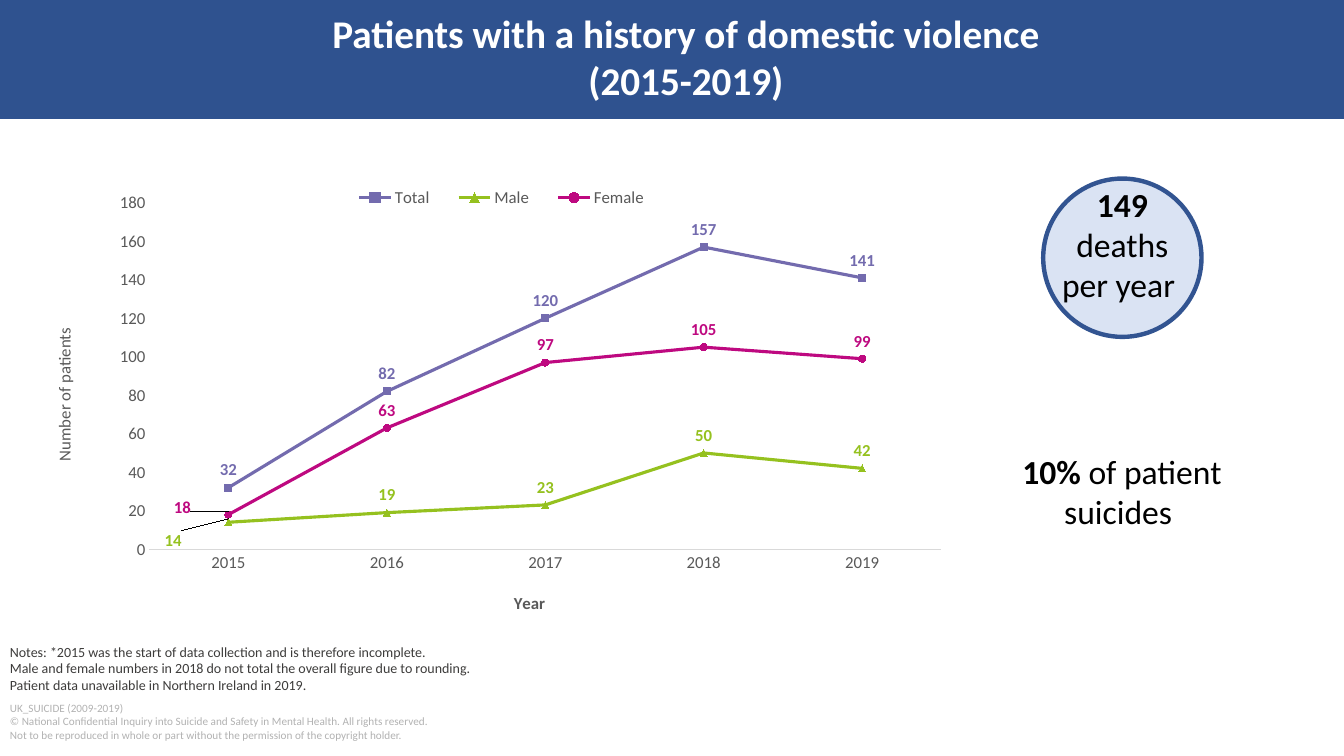
from lxml import etree
from pptx import Presentation
from pptx.chart.data import CategoryChartData
from pptx.dml.color import RGBColor
from pptx.enum import chart as ch, shapes, text
from pptx.oxml import parse_xml
from pptx.oxml.ns import nsdecls, qn
from pptx.util import Cm, Pt

BAND_BLUE = RGBColor(0x2F, 0x52, 0x8F)
RING_BLUE = RGBColor(0x32, 0x54, 0x91)
PALE_BLUE = RGBColor(0xDA, 0xE3, 0xF3)
WHITE = RGBColor(0xFF, 0xFF, 0xFF)
BLACK = RGBColor(0, 0, 0)
NOTE_GREY = RGBColor(0x3D, 0x3C, 0x3B)
CREDIT_GREY = RGBColor(0xB2, 0xB2, 0xB2)
AXIS_GREY = RGBColor(0x59, 0x59, 0x59)
LINE_GREY = RGBColor(0xD9, 0xD9, 0xD9)
PURPLE = RGBColor(0x73, 0x6B, 0xAE)
GREEN = RGBColor(0x95, 0xC1, 0x1F)
PINK = RGBColor(0xBE, 0x09, 0x80)


def set_font(font, size, color, bold=False):
    font.name, font.size, font.bold = "Calibri", Pt(size), bold
    font.color.rgb = color


def manual_layout(**values):
    """Return a c:layout; edges and target come before positions, as the schema asks."""
    layout = parse_xml(f"<c:layout {nsdecls('c')}><c:manualLayout/></c:layout>")
    for tag, value in values.items():
        etree.SubElement(layout[0], qn(f"c:{tag}")).set("val", str(value))
    return layout


prs = Presentation()
prs.slide_width, prs.slide_height = Cm(33.87), Cm(19.05)
slide = prs.slides.add_slide(prs.slide_layouts[5])

# Heading band, placed behind the title
band = slide.shapes.add_shape(shapes.MSO_SHAPE.RECTANGLE, 0, 0, prs.slide_width, Cm(3))
band.shadow.inherit = False
band.fill.solid()
band.fill.fore_color.rgb = BAND_BLUE
band.line.fill.background()
slide.shapes._spTree.insert(2, band._element)

title = slide.shapes.title
title.left, title.top, title.width, title.height = Cm(6.05), Cm(0.1), Cm(21.2), Cm(2.64)
title.text_frame.text = "Patients with a history of domestic violence (2015-2019)"
title.text_frame.word_wrap = True
title.text_frame.vertical_anchor = text.MSO_ANCHOR.MIDDLE
heading = title.text_frame.paragraphs[0]
heading.alignment = text.PP_ALIGN.CENTER
heading._p.get_or_add_pPr().set("marL", str(Cm(1.27)))
set_font(heading.runs[0].font, 28, WHITE, True)

# Deaths per year
badge = slide.shapes.add_group_shape()
ring = badge.shapes.add_shape(
    shapes.MSO_SHAPE.FLOWCHART_CONNECTOR, Cm(26.29), Cm(4.5), Cm(3.99), Cm(3.99))
ring.shadow.inherit = False
ring.fill.solid()
ring.fill.fore_color.rgb = PALE_BLUE
ring.line.color.rgb = RING_BLUE
ring.line.width = Pt(3.15)

# Text blocks: parent, left, top, width, height, size, colour, centred, paragraphs of (words, bold)
text_blocks = [
    (badge, 26.29, 4.5, 3.99, 3.33, 24, BLACK, True,
     [[("149", True)], [("deaths per year ", False)]]),
    (slide, 25.1, 11.23, 6.35, 2.31, 24, BLACK, True,
     [[("10% ", True), ("of patient suicides ", False)]]),
    (slide, 0, 16.08, 13.13, 1.55, 10, NOTE_GREY, False,
     [[("Notes: *2015 was the start of data collection and is therefore incomplete.", False)],
      [("Male and female numbers in 2018 do not total the overall figure due to rounding.", False)],
      [("Patient data unavailable in Northern Ireland in 2019.", False)]]),
    (slide, 0, 17.55, 19.99, 1.5, 8, CREDIT_GREY, False,
     [[("UK_SUICIDE (2009-2019)", False)],
      [("© National Confidential Inquiry into Suicide and Safety in Mental Health. "
         "All rights reserved.", False)],
      [("Not to be reproduced in whole or part without the permission of the "
         "copyright holder.", False)]]),
]
for parent, left, top, width, height, size, color, centred, paragraphs in text_blocks:
    frame = parent.shapes.add_textbox(Cm(left), Cm(top), Cm(width), Cm(height)).text_frame
    frame.word_wrap = True
    for i, parts in enumerate(paragraphs):
        paragraph = frame.add_paragraph() if i else frame.paragraphs[0]
        paragraph.alignment = text.PP_ALIGN.CENTER if centred else text.PP_ALIGN.LEFT
        for words, bold in parts:
            run = paragraph.add_run()
            run.text = words
            set_font(run.font, size, color, bold)

# Patients by year: name, values, colour, marker, offset of the 2015 label
patient_groups = [
    ("Total", (32, 82, 120, 157, 141), PURPLE, ch.XL_MARKER_STYLE.SQUARE, None),
    ("Male", (14, 19, 23, 50, 42), GREEN, ch.XL_MARKER_STYLE.TRIANGLE, (-0.06, 0.07)),
    ("Female", (18, 63, 97, 105, 99), PINK, ch.XL_MARKER_STYLE.CIRCLE, (-0.05, 0.02)),
]
patients = CategoryChartData()
patients.categories = [str(year) for year in range(2015, 2020)]
for name, values, *_ in patient_groups:
    patients.add_series(name, values)
chart = slide.shapes.add_chart(ch.XL_CHART_TYPE.LINE_MARKERS, Cm(1.02), Cm(3.96),
                               Cm(23.24), Cm(12.8), patients).chart
chart.has_title = False
set_font(chart.font, 12, BLACK)
chart.plots[0].vary_by_categories = False
plot_area = chart._chartSpace.chart.plotArea
for old_layout in plot_area.findall(qn("c:layout")):
    plot_area.remove(old_layout)
plot_area.insert(0, manual_layout(layoutTarget="inner", xMode="edge", yMode="edge",
                                  x=0.118, y=0.09, w=0.859, h=0.682))

chart.has_legend = True
chart.legend.position = ch.XL_LEGEND_POSITION.BOTTOM
chart.legend.include_in_layout = False
set_font(chart.legend.font, 12, AXIS_GREY)
legend = chart.legend._element
for old_layout in legend.findall(qn("c:layout")):
    legend.remove(old_layout)
legend.find(qn("c:legendPos")).addnext(
    manual_layout(xMode="edge", yMode="edge", x=0.32, y=0.05, w=0.36, h=0.06))

for axis, caption, bold, line_color, x, y in (
        (chart.category_axis, "Year", True, LINE_GREY, 0.51, 0.85),
        (chart.value_axis, "Number of patients", False, WHITE, 0.01, 0.33)):
    axis.has_major_gridlines = False
    axis.major_tick_mark = axis.minor_tick_mark = ch.XL_TICK_MARK.NONE
    axis.format.line.color.rgb = line_color
    axis.format.line.width = Pt(0.75)
    set_font(axis.tick_labels.font, 12, AXIS_GREY)
    caption_frame = axis.axis_title.text_frame
    caption_frame.text = caption
    set_font(caption_frame.paragraphs[0].runs[0].font, 12, AXIS_GREY, bold)
    axis_title = axis.axis_title._element
    for old_layout in axis_title.findall(qn("c:layout")):
        axis_title.remove(old_layout)
    axis_title.find(qn("c:tx")).addnext(manual_layout(xMode="edge", yMode="edge", x=x, y=y))
caption_frame._txBody.find(qn("a:bodyPr")).set("rot", "-5400000")
chart.value_axis.minimum_scale = 0
chart.value_axis.maximum_scale = 180
chart.value_axis.major_unit = 20

for series, (_, _, color, marker, offset) in zip(chart.plots[0].series, patient_groups):
    series.smooth = False
    series.format.line.color.rgb = color
    series.format.line.width = Pt(2.25)
    series.marker.style = marker
    series.marker.size = 5
    series.marker.format.fill.solid()
    series.marker.format.fill.fore_color.rgb = color
    series.marker.format.line.color.rgb = color
    labels = series.data_labels
    labels.show_value = True
    labels.position = ch.XL_LABEL_POSITION.ABOVE
    set_font(labels.font, 12, color, True)
    if offset:
        first_label = series.points[0].data_label
        first_label.position = ch.XL_LABEL_POSITION.ABOVE
        set_font(first_label.font, 12, color, True)
        label_index = labels._element.find(qn("c:dLbl")).find(qn("c:idx"))
        label_index.addnext(manual_layout(x=offset[0], y=offset[1]))

prs.save("out.pptx")
